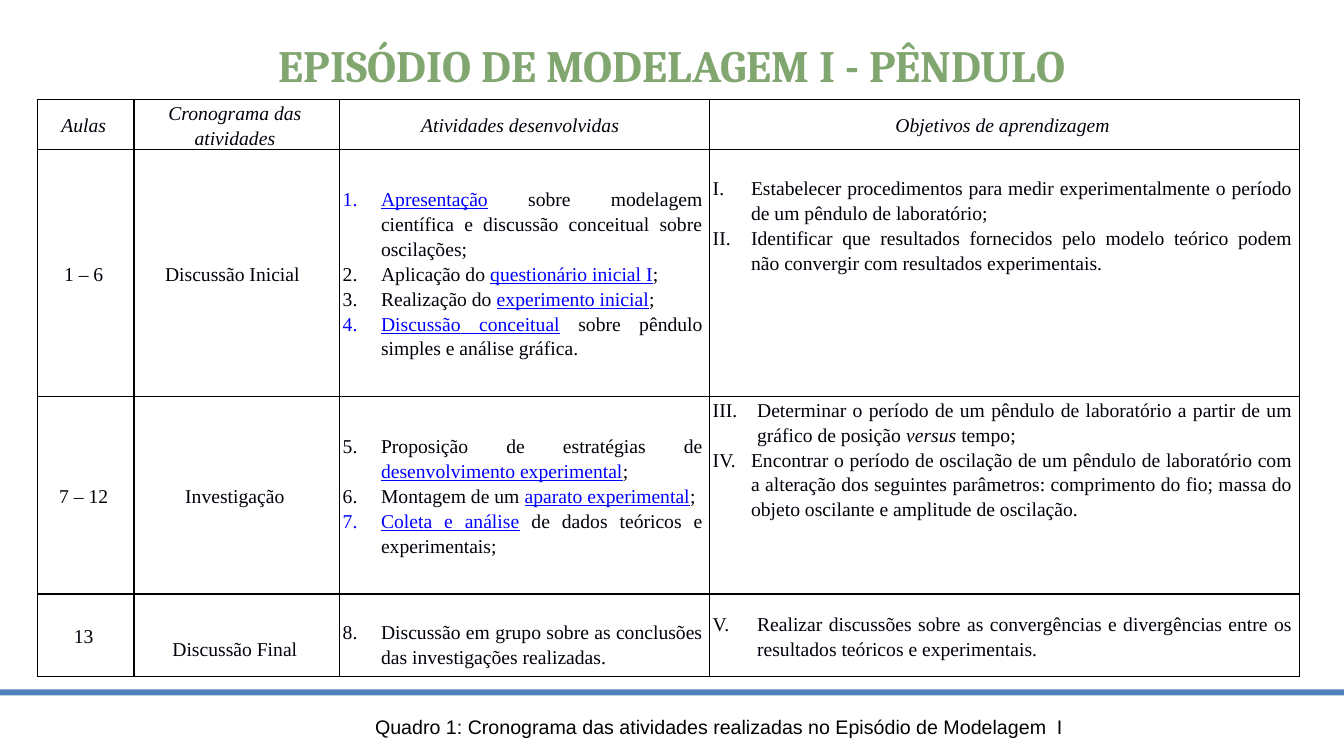
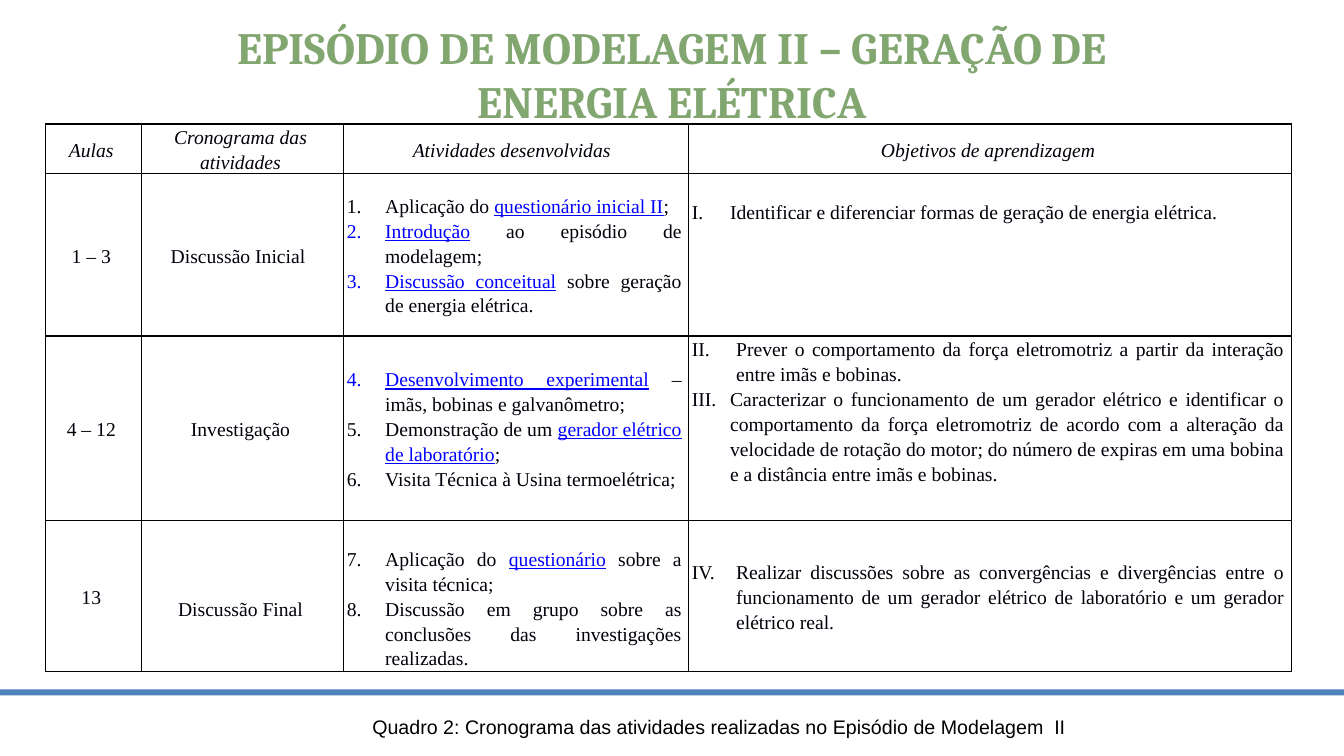
from lxml import etree
from pptx import Presentation
from pptx import util as u
from pptx.dml.color import RGBColor
from pptx.enum import shapes, text
from pptx.oxml.ns import qn

WIDE, HIGH = u.Inches(13.33), u.Inches(7.5)
GREEN = RGBColor(0x82, 0xA6, 0x70)
BLUE = RGBColor(0x4F, 0x81, 0xBD)
LINK = RGBColor(0x00, 0x00, 0xFF)
INK = RGBColor(0x00, 0x00, 0x0A)
BLACK = RGBColor(0x00, 0x00, 0x00)
SERIF = "Times New Roman"
MID, TOP = text.MSO_ANCHOR.MIDDLE, text.MSO_ANCHOR.TOP
GAP = u.Inches(0.25)
HEADS = ["Aulas", "Cronograma das atividades", "Atividades desenvolvidas ",
         "Objetivos de aprendizagem"]
STAGES = ["Discussão Inicial ", "Investigação", "Discussão Final"]

PAGES = [
    dict(
        title="EPISÓDIO DE MODELAGEM I - PÊNDULO",
        top=1.73, tall=11.07, place=(2.78, 13.2),
        cols=[7.2, 15.3, 27.53, 43.89], rows=[6.53, 32.67, 26.13, 10.93],
        weeks=["1 – 6", "7 – 12", "13"],
        tasks=[
            ["|Apresentação| sobre modelagem científica e discussão conceitual sobre oscilações; ",
             "Aplicação do |questionário inicial I|;",
             "Realização do |experimento inicial|;",
             "|Discussão conceitual| sobre pêndulo simples e análise gráfica."],
            ["Proposição de estratégias de |desenvolvimento experimental|;",
             "Montagem de um |aparato experimental|;",
             "|Coleta e análise| de dados teóricos e experimentais;"],
            ["Discussão em grupo sobre as conclusões das investigações realizadas."]],
        goals=[
            ["Estabelecer procedimentos para medir experimentalmente o período de um "
             "pêndulo de laboratório;",
             "Identificar que resultados fornecidos pelo modelo teórico podem não convergir "
             "com resultados experimentais."],
            ["Determinar o período de um pêndulo de laboratório a partir de um gráfico de "
             "posição *versus *tempo;",
             "Encontrar o período de oscilação de um pêndulo de laboratório com a alteração "
             "dos seguintes parâmetros: comprimento do fio; massa do objeto oscilante e "
             "amplitude de oscilação."],
            ["Realizar discussões sobre as convergências e divergências entre os resultados "
             "teóricos e experimentais."]],
        note="Quadro 1: Cronograma das atividades realizadas no Episódio de Modelagem  I"),
    dict(
        title="EPISÓDIO DE MODELAGEM II – GERAÇÃO DE ENERGIA ELÉTRICA",
        top=4.27, tall=13.2, place=(3.38, 16.4),
        cols=[7.13, 15.08, 25.66, 44.86], rows=[6.53, 21.47, 24.4, 20],
        weeks=["1 – 3", "4 – 12", "13"],
        tasks=[
            ["Aplicação do |questionário inicial II|; ",
             "|Introdução| ao episódio de modelagem;",
             "|Discussão conceitual| sobre geração de energia elétrica."],
            ["|Desenvolvimento experimental| – imãs, bobinas e galvanômetro;",
             "Demonstração de um |gerador elétrico de laboratório|;",
             "Visita Técnica à Usina termoelétrica;"],
            ["Aplicação do |questionário| sobre a visita técnica;",
             "Discussão em grupo sobre as conclusões das investigações realizadas."]],
        goals=[
            ["Identificar e diferenciar formas de geração de energia elétrica."],
            ["Prever o comportamento da força eletromotriz a partir da interação entre imãs "
             "e bobinas.",
             "Caracterizar o funcionamento de um gerador elétrico e identificar o "
             "comportamento da força eletromotriz de acordo com a alteração da velocidade de "
             "rotação do motor; do número de expiras em uma bobina e a distância entre imãs e "
             "bobinas."],
            ["Realizar discussões sobre as convergências e divergências entre o funcionamento "
             "de um gerador elétrico de laboratório e um gerador elétrico real."]],
        note="Quadro 2: Cronograma das atividades realizadas no Episódio de Modelagem  II"),
]


def part(x, y, w, h):
    """Turn percentages of the slide into a left, top, width, height box."""
    return [int(side * share / 100)
            for side, share in zip((WIDE, HIGH, WIDE, HIGH), (x, y, w, h))]


def style(run, size, face, ink, bold=False, slant=False):
    """Format one run."""
    font = run.font
    font.size, font.name, font.bold, font.italic = u.Pt(size), face, bold, slant
    font.color.rgb = ink


def band(prs, layout):
    """Put the blue band on the layout that all slides share."""
    bar = prs.slides[0].shapes.add_shape(shapes.MSO_SHAPE.RECTANGLE, *part(0, 91.2, 100, 0.8))
    bar.shadow.inherit = False
    bar.fill.solid()
    bar.fill.fore_color.rgb = BLUE
    bar.line.fill.background()
    layout.shapes.element.append(bar.element)


def head(slide, words, top, tall):
    """Place and format the title."""
    title = slide.shapes.title
    title.left, title.top, title.width, title.height = part(10.65, top, 78.77, tall)
    frame = title.text_frame
    frame.text = words
    frame.auto_size = text.MSO_AUTO_SIZE.NONE
    frame.vertical_anchor = text.MSO_ANCHOR.BOTTOM
    line = frame.paragraphs[0]
    line.alignment = text.PP_ALIGN.CENTER
    style(line.runs[0], 32, "Cambria", GREEN, bold=True)


def note(slide, words):
    """Write the caption below the band."""
    frame = slide.shapes.add_textbox(*part(22.8, 93.87, 61.44, 4.53)).text_frame
    frame.word_wrap = True
    frame.text = words
    line = frame.paragraphs[0]
    line.alignment = text.PP_ALIGN.CENTER
    style(line.runs[0], 14, "Arial", BLACK)


def frame_cell(cell, anchor=MID, drop=0):
    """Set the margins, anchor and black borders of a cell."""
    cell.margin_left, cell.margin_right = u.Inches(0.03), u.Inches(0.07)
    cell.margin_top, cell.margin_bottom = drop, 0
    cell.vertical_anchor = anchor
    cell.fill.background()
    props = cell._tc.get_or_add_tcPr()
    for spot, side in enumerate("LRTB"):
        edge = etree.Element(qn("a:ln" + side), w=str(u.Pt(1)))
        fill = etree.SubElement(edge, qn("a:solidFill"))
        etree.SubElement(fill, qn("a:srgbClr"), val=str(BLACK))
        props.insert(spot, edge)


def label(cell, words, slant=False, drop=0):
    """Write a centred cell."""
    frame_cell(cell, drop=drop)
    cell.text_frame.text = words
    line = cell.text_frame.paragraphs[0]
    line.alignment, line.line_spacing = text.PP_ALIGN.CENTER, 1.15
    style(line.runs[0], 14, SERIF, INK, slant=slant)


def number(line, kind, start, indent, ink):
    """Give a paragraph an automatic number with a hanging indent."""
    props = line._p.get_or_add_pPr()
    props.set("marL", str(u.Inches(indent)))
    props.set("indent", str(-u.Inches(indent)))
    tint = etree.SubElement(props, qn("a:buClr"))
    etree.SubElement(tint, qn("a:srgbClr"), val=str(ink))
    etree.SubElement(props, qn("a:buFont"), typeface=SERIF)
    etree.SubElement(props, qn("a:buAutoNum"), type=kind, startAt=str(start))


def items(cell, lines, kind, start, first, anchor, drop):
    """Write a numbered list; bars mark links and stars mark italics."""
    frame_cell(cell, anchor, drop)
    frame = cell.text_frame
    for order, words in enumerate(lines):
        line = frame.add_paragraph() if order else frame.paragraphs[0]
        line.alignment, line.line_spacing = text.PP_ALIGN.JUSTIFY, 1.15
        ink = LINK if words.startswith("|") else INK
        number(line, kind, start, 0.38 if order else first, ink)
        for odd, chunk in enumerate(words.split("|")):
            for slant, piece in enumerate(chunk.split("*")):
                if piece:
                    run = line.add_run()
                    run.text = piece
                    style(run, 14, SERIF, LINK if odd % 2 else INK, slant=slant % 2 == 1)
                    run.font.underline = odd % 2 == 1


def grid(slide, page):
    """Build the schedule table, numbering its lists from row to row."""
    cols, rows = page["cols"], page["rows"]
    spot = part(*page["place"], sum(cols), sum(rows))
    table = slide.shapes.add_table(len(rows), len(cols), *spot).table
    table.first_row = table.horz_banding = False
    for col, share in zip(table.columns, cols):
        col.width = int(WIDE * share / 100)
    for row, share in zip(table.rows, rows):
        row.height = int(HIGH * share / 100)
    for col, words in enumerate(HEADS):
        label(table.cell(0, col), words, slant=True)
    task = goal = 1
    parts = zip(page["weeks"], STAGES, page["tasks"], page["goals"])
    for row, (week, stage, tasks, goals) in enumerate(parts, 1):
        last = row == len(STAGES)
        drop = GAP if last else 0
        label(table.cell(row, 0), week)
        label(table.cell(row, 1), stage, drop=drop)
        items(table.cell(row, 2), tasks, "arabicPeriod", task, 0.38,
              TOP if last else MID, drop)
        items(table.cell(row, 3), goals, "romanUcPeriod", goal, 0.38 if row == 1 else 0.44,
              MID if last else TOP, GAP if row == 1 else 0)
        task += len(tasks)
        goal += len(goals)


def main():
    """Build and save the slides."""
    prs = Presentation()
    prs.slide_width, prs.slide_height = WIDE, HIGH
    layout = prs.slide_layouts[5]
    for page in PAGES:
        slide = prs.slides.add_slide(layout)
        head(slide, page["title"], page["top"], page["tall"])
        grid(slide, page)
        note(slide, page["note"])
    band(prs, layout)
    prs.save("out.pptx")


if __name__ == "__main__":
    main()
